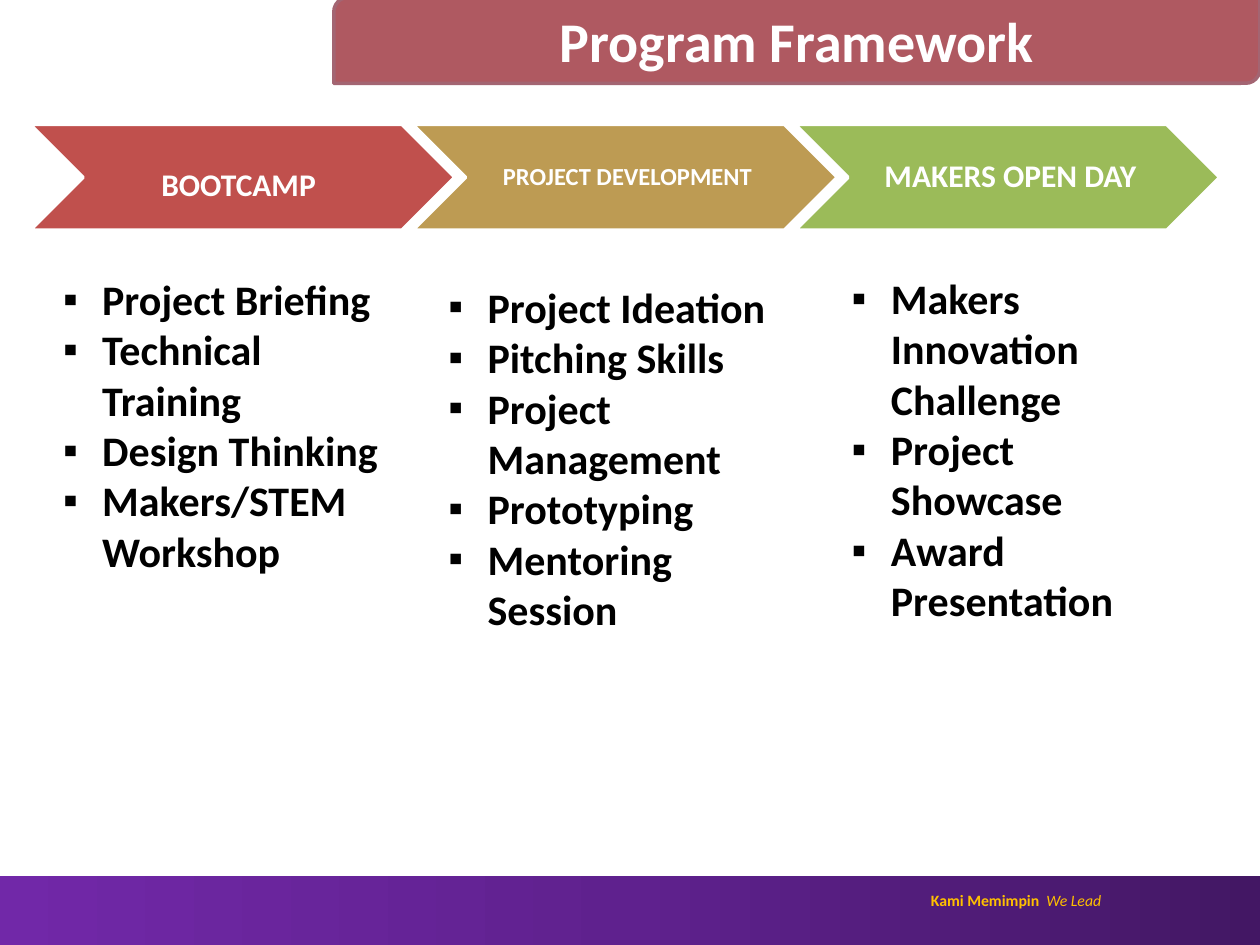
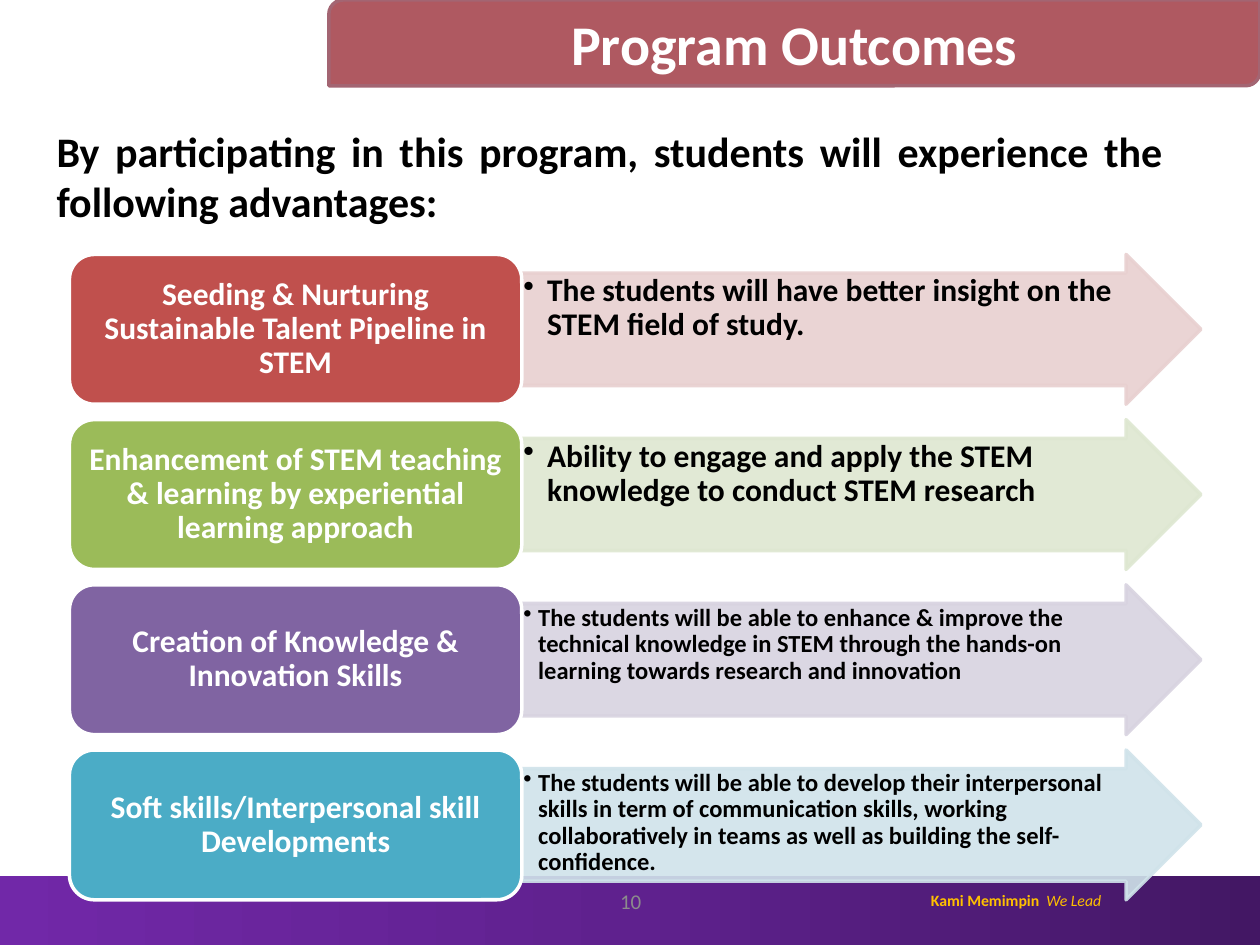
from lxml import etree
from pptx import Presentation
from pptx.dml.color import RGBColor
from pptx.enum.shapes import MSO_SHAPE
from pptx.enum.text import MSO_ANCHOR, MSO_AUTO_SIZE, PP_ALIGN
from pptx.oxml import parse_xml
from pptx.oxml.ns import nsdecls, qn
from pptx.util import Cm, Pt

RECT, BAND = MSO_SHAPE.RECTANGLE, MSO_SHAPE.ROUND_2_DIAG_RECTANGLE
CHEVRON, ARROW, ROUNDED = MSO_SHAPE.CHEVRON, MSO_SHAPE.RIGHT_ARROW, MSO_SHAPE.ROUNDED_RECTANGLE
TOP, MIDDLE, NO_FIT = MSO_ANCHOR.TOP, MSO_ANCHOR.MIDDLE, MSO_AUTO_SIZE.NONE
LEFT, CENTER, RIGHT, JUSTIFY = PP_ALIGN.LEFT, PP_ALIGN.CENTER, PP_ALIGN.RIGHT, PP_ALIGN.JUSTIFY

# Shared colours and formats
WHITE, BLACK, GREY, GOLD = "FFFFFF", "000000", "8C8C8C", "FFC000"
RED, SAND, GREEN, PURPLE, TEAL = "C0504D", "BD9B53", "9BBB59", "8064A2", "4BACC6"
BAND_FILL, BAND_LINE = "AF5961", "A36572"
TITLE = {"size": Pt(32), "bold": True}
BODY = {"size": Pt(24), "bold": True}
LABEL = {"size": Pt(18), "bold": True}
SMALL = {"size": Pt(14), "bold": True}
rgb = RGBColor.from_string


def add_shape(s, kind, box, fill, line=WHITE):
    sp = s.shapes.add_shape(kind, *[Cm(v) for v in box])
    sp.shadow.inherit = False
    sp.fill.solid()
    sp.fill.fore_color.rgb = rgb(fill)
    sp.line.color.rgb = rgb(line)
    sp.line.width = Pt(2)
    return sp


def write(tf, texts, font, color=BLACK, align=LEFT, anchor=TOP, spacing=1.0,
          bullet=None, indent=0, insets=(0.25, 0.13, 0.25, 0.13)):
    left, top, right, bottom = [Cm(v) for v in insets]
    frame = {"word_wrap": True, "auto_size": NO_FIT, "vertical_anchor": anchor,
             "margin_left": left, "margin_top": top,
             "margin_right": right, "margin_bottom": bottom}
    for name, value in frame.items():
        setattr(tf, name, value)
    for i, text in enumerate(texts):
        p = tf.add_paragraph() if i else tf.paragraphs[0]
        pPr = p._p.get_or_add_pPr()
        pPr.set("marL", str(Cm(indent)))
        pPr.set("indent", str(-Cm(indent)))
        bu = etree.SubElement(pPr, qn("a:buChar" if bullet else "a:buNone"))
        if bullet:
            bu.set("char", bullet)
        para = {"alignment": align, "line_spacing": spacing,
                "space_before": Pt(0), "space_after": Pt(0)}
        for name, value in para.items():
            setattr(p, name, value)
        r = p.add_run()
        r.text = text
        for name, value in {"name": "Calibri", **font}.items():
            setattr(r.font, name, value)
        r.font.color.rgb = rgb(color)


prs = Presentation()
prs.slide_width, prs.slide_height = Cm(25.4), Cm(19.05)
framework = prs.slides.add_slide(prs.slide_layouts[4])
outcomes = prs.slides.add_slide(prs.slide_layouts[1])

# Footer band and motto, moved to the master
footer = add_shape(framework, RECT, (0, 17.65, 25.4, 1.4), PURPLE)
footer.line.fill.background()
footer.fill.background()
spPr = footer._element.spPr
spPr.replace(spPr.find(qn("a:noFill")), parse_xml(
    f'<a:gradFill {nsdecls("a")} rotWithShape="1"><a:gsLst>'
    + "".join(f'<a:gs pos="{pos}"><a:srgbClr val="{c}"/></a:gs>' for pos, c in
              ((0, "431764"), (50000, "5F218E"), (100000, "7128A8")))
    + '</a:gsLst><a:lin ang="10800000" scaled="0"/></a:gradFill>'))
motto = framework.shapes.add_textbox(Cm(18.21), Cm(17.83), Cm(4.24), Cm(0.64))
write(motto.text_frame, ["Kami Memimpin  "], {"size": Pt(9), "bold": True}, GOLD, RIGHT)
r = motto.text_frame.paragraphs[0].add_run()
r.text = "We Lead"
for name, value in {"name": "Calibri", "size": Pt(9), "italic": True}.items():
    setattr(r.font, name, value)
r.font.color.rgb = rgb(GOLD)
for sp in (footer, motto):
    prs.slide_master.shapes._spTree.append(sp._element)

# Title bands
for s, text, box in ((framework, "Program Framework", (6.73, -0.05, 18.67, 1.73)),
                     (outcomes, "Program Outcomes", (6.63, 0, 18.77, 1.73))):
    band = add_shape(s, BAND, box, BAND_FILL, BAND_LINE)
    s.shapes._spTree.insert(2, band._element)
    title = s.shapes.title
    title.left, title.top, title.width, title.height = [Cm(v) for v in box]
    write(title.text_frame, [text], TITLE, WHITE, CENTER, MIDDLE)

# Program Framework: phase chevrons
phases = [("BOOTCAMP", RED, LABEL, (0.2, 0.44, 0.36, 0.08)),
          ("PROJECT DEVELOPMENT", SAND, SMALL, (0.15, 0.05, 0.05, 0.05)),
          ("MAKERS OPEN DAY", GREEN, LABEL, (0.2, 0.08, 0.08, 0.08))]
for i, (text, fill, font, insets) in enumerate(phases):
    sp = add_shape(framework, CHEVRON, (0.61 + 7.71 * i, 2.51, 8.56, 2.13), fill)
    write(sp.text_frame, [text], font, WHITE, CENTER, MIDDLE, 0.9, insets=insets)

# Program Framework: activities of each phase
activities = [
    (1, 1.02, 5.38, 5.64, ["Project Briefing", "Technical Training", "Design Thinking",
                           "Makers/STEM Workshop"]),
    (2, 8.79, 5.54, 8.46, ["Project Ideation", "Pitching Skills", "Project Management",
                           "Prototyping", "Mentoring Session"]),
    (3, 16.92, 5.36, 7.95, ["Makers Innovation Challenge", "Project Showcase",
                            "Award Presentation"])]
for idx, left, top, height, items in activities:
    sp = framework.placeholders[idx]
    sp.left, sp.top, sp.width, sp.height = Cm(left), Cm(top), Cm(6.93), Cm(height)
    write(sp.text_frame, items, BODY, bullet="▪", indent=0.79)
spare = framework.placeholders[4]._element
spare.getparent().remove(spare)

# Program Outcomes: introduction and page number
intro = outcomes.placeholders[1]
intro.left, intro.top, intro.width, intro.height = Cm(0.89), Cm(2.39), Cm(22.81), Cm(2.3)
write(intro.text_frame, ["By participating in this program, students will experience "
                         "the following advantages:"], BODY, align=JUSTIFY)
number = outcomes.shapes.add_textbox(Cm(8.69), Cm(17.65), Cm(8.05), Cm(1.02))
write(number.text_frame, ["10"], {"size": Pt(12)}, GREY, CENTER, MIDDLE)

# Program Outcomes: one box and arrow per advantage
advantages = [
    ("Seeding & Nurturing Sustainable Talent Pipeline in STEM", RED, "E8D0D0", LABEL, 0.48,
     "The students will have better insight on the STEM field of study."),
    ("Enhancement of STEM teaching & learning by experiential learning approach",
     GREEN, "DEE7D1", LABEL, 0.48,
     "Ability to engage and apply the STEM knowledge to conduct STEM research"),
    ("Creation of Knowledge & Innovation Skills", PURPLE, "D8D3E0", SMALL, 0.3,
     "The students will be able to enhance & improve the technical knowledge in STEM "
     "through the hands-on learning towards research and innovation"),
    ("Soft skills/Interpersonal skill Developments", TEAL, "D0E3EA", SMALL, 0.3,
     "The students will be able to develop their interpersonal skills in term of "
     "communication skills, working collaboratively in teams as well as building the "
     "self-confidence.")]
for i, (name, fill, tint, font, indent, detail) in enumerate(advantages):
    top = 5.13 + 3.33 * i
    arrow = add_shape(outcomes, ARROW, (10.52, top, 13.69, 3.02), tint, tint)
    arrow.adjustments[0], arrow.adjustments[1] = 0.75, 0.5
    for clr in arrow._element.spPr.iter(qn("a:srgbClr")):
        etree.SubElement(clr, qn("a:alpha")).set("val", "90000")
    write(arrow.text_frame, [detail], font, spacing=0.9, bullet="•", indent=indent,
          insets=(0.03, 0.03, 0.03, 0.03))
    box = add_shape(outcomes, ROUNDED, (1.4, top, 9.12, 3.02), fill)
    write(box.text_frame, [name], LABEL, WHITE, CENTER, MIDDLE, 0.9,
          insets=(0.18, 0.1, 0.18, 0.1))

prs.save("out.pptx")
